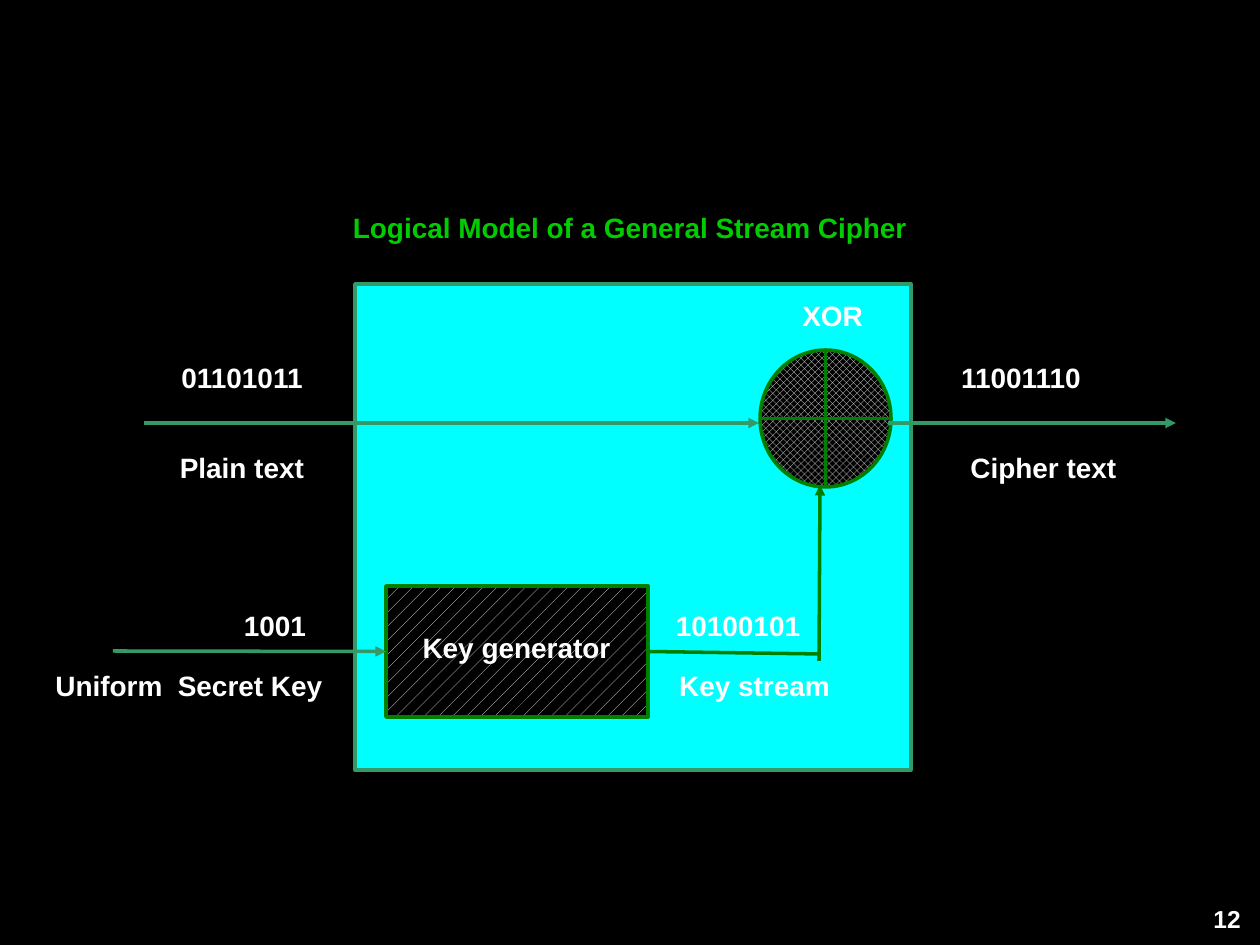
"""Build the stream cipher slide."""
from lxml.etree import SubElement
from pptx import Presentation
from pptx.dml.color import RGBColor
from pptx.enum.dml import MSO_PATTERN as PATTERN
from pptx.enum.shapes import MSO_CONNECTOR as CONNECTOR, MSO_SHAPE as SHAPE
from pptx.enum.text import MSO_ANCHOR as ANCHOR, MSO_AUTO_SIZE as AUTO, PP_ALIGN as ALIGN
from pptx.oxml.ns import qn
from pptx.util import Emu, Inches, Pt

COLORS = {"black": "000000", "white": "FFFFFF", "cyan": "00FFFF",
          "title": "00CC00", "green": "008000", "teal": "339966"}


def px(n):
    return Emu(round(n * 914400 / 126))


def color(name):
    return RGBColor.from_string(COLORS[name])


class Deck:
    def __init__(self, s, font="Arial", size=16, weight=2):
        self.s, self.font, self.size, self.weight = s, font, size, weight

    def background(self, name):
        fill = self.s.background.fill
        fill.solid()
        fill.fore_color.rgb = color(name)

    def set_text(self, sp, text, name="white", size=None, align=ALIGN.CENTER):
        tf = sp.text_frame
        tf.text = text
        tf.word_wrap = True
        tf.auto_size = AUTO.NONE
        tf.vertical_anchor = ANCHOR.TOP
        p = tf.paragraphs[0]
        p.alignment = align
        f = p.runs[0].font
        f.name, f.size, f.bold = self.font, Pt(size or self.size), True
        f.color.rgb = color(name)

    def title(self, text, x, y, w, h):
        sp = self.s.shapes.title
        sp.left, sp.top, sp.width, sp.height = map(px, (x, y, w, h))
        self.set_text(sp, text, "title")

    def label(self, text, x, y, w, h=46, **style):
        self.set_text(self.s.shapes.add_textbox(*map(px, (x, y, w, h))), text, **style)

    def shape(self, kind, x, y, w, h, line, fill=None, pattern=None):
        sp = self.s.shapes.add_shape(kind, *map(px, (x, y, w, h)))
        sp.shadow.inherit = False
        if pattern is None:
            sp.fill.solid()
            sp.fill.fore_color.rgb = color(fill)
        else:
            sp.fill.patterned()
            sp.fill.pattern = pattern
            sp.fill.fore_color.rgb = color("white")
            sp.fill.back_color.rgb = color("black")
        sp.line.color.rgb = color(line)
        sp.line.width = Pt(self.weight)
        return sp

    def line(self, x1, y1, x2, y2, name, arrow=True):
        c = self.s.shapes.add_connector(CONNECTOR.STRAIGHT, *map(px, (x1, y1, x2, y2)))
        c.line.color.rgb = color(name)
        c.line.width = Pt(self.weight)
        props = c._element.spPr
        if arrow:
            SubElement(props.find(qn("a:ln")), qn("a:tailEnd"), type="triangle")
        SubElement(props, qn("a:effectLst"))
        return c


def main():
    prs = Presentation()
    prs.slide_width, prs.slide_height = Inches(10), Inches(7.5)
    d = Deck(prs.slides.add_slide(prs.slide_layouts[5]))
    d.background("black")
    d.title("Logical Model of a General Stream Cipher", 0, 204, 1260, 46)

    d.shape(SHAPE.RECTANGLE, 355, 284, 556, 486, "teal", fill="cyan")
    d.shape(SHAPE.FLOWCHART_OR, 760, 350, 131, 137, "green",
            pattern=PATTERN.OUTLINED_DIAMOND)
    key_generator = d.shape(SHAPE.RECTANGLE, 386, 586, 262, 131, "green",
                            pattern=PATTERN.PERCENT_10)

    d.line(144, 423, 759, 423, "teal")
    d.line(888, 423, 1176, 423, "teal")
    d.line(819, 661, 820, 485, "green")
    secret_key = d.line(113, 651, 386, 651, "teal")
    secret_key.end_connect(key_generator, 1)
    key_stream = d.line(648, 654, 820, 654, "green", arrow=False)
    key_stream.begin_connect(key_generator, 3)

    for text, x, y, w in (
        ("01101011", 144, 354, 196),
        ("Plain text", 154, 444, 176),
        ("11001110", 927, 354, 188),
        ("Cipher text", 948, 444, 191),
        ("1001", 203, 602, 144),
        ("Uniform  Secret Key", 25, 662, 328),
        ("Key generator", 386, 624, 261),
        ("10100101", 650, 602, 176),
        ("Key stream", 640, 662, 229),
    ):
        d.label(text, x, y, w)
    d.label("XOR", 790, 292, 101, align=ALIGN.LEFT)
    d.label("12", 1201, 898, 59, size=14, align=ALIGN.LEFT)
    prs.save("out.pptx")


if __name__ == "__main__":
    main()
